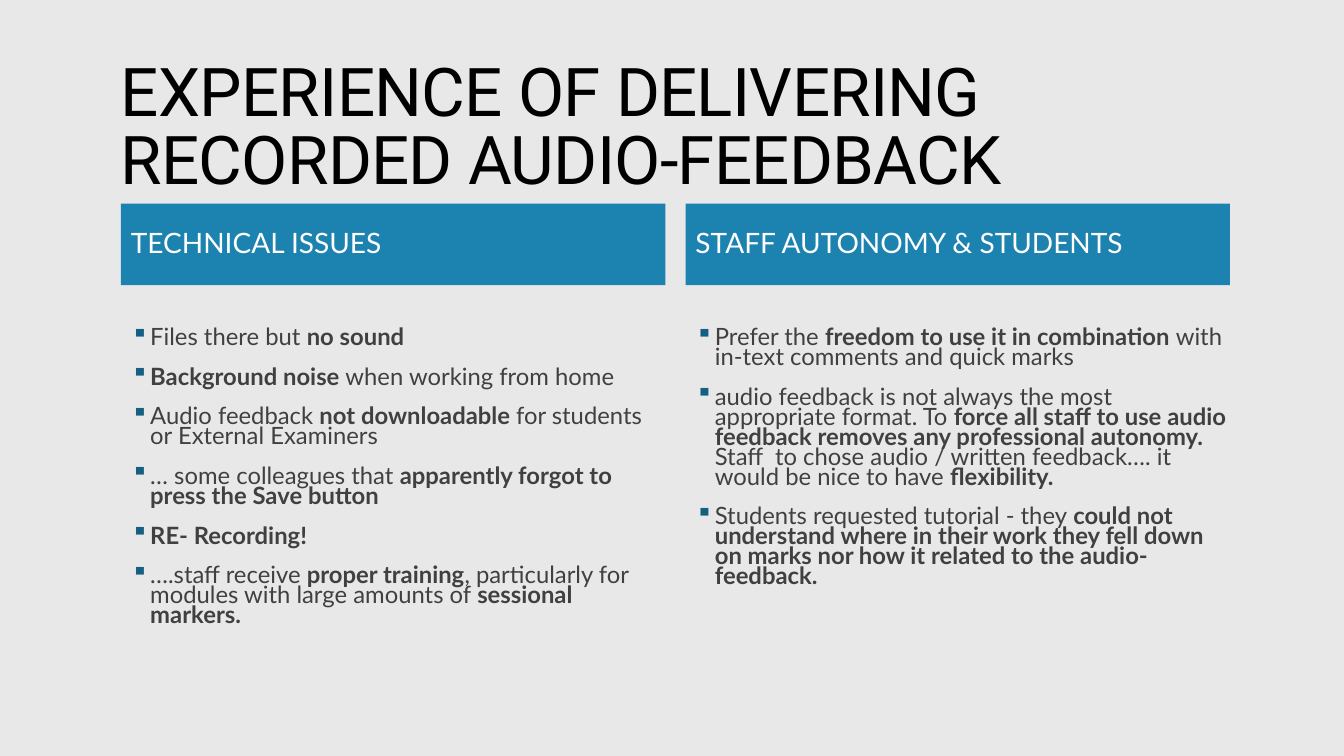
from dataclasses import dataclass

from lxml import etree
from pptx import Presentation
from pptx.dml.color import RGBColor
from pptx.enum.shapes import MSO_SHAPE
from pptx.enum.text import MSO_ANCHOR, PP_ALIGN
from pptx.oxml.ns import qn
from pptx.util import Inches, Pt

RECTANGLE = MSO_SHAPE.RECTANGLE
LEFT = PP_ALIGN.LEFT
TOP, MIDDLE, BOTTOM = MSO_ANCHOR.TOP, MSO_ANCHOR.MIDDLE, MSO_ANCHOR.BOTTOM

COLOURS = {
    "background": "E8E8E8",
    "title": "000000",
    "band": "1C82B0",
    "heading": "FFFFFF",
    "body": "404040",
    "bullet": "156082",
}

# Grid in inches: two columns, with a title row, a heading row and a body row
SLIDE_WIDTH, SLIDE_HEIGHT = 13.33, 7.5
MARGIN, COLUMN_WIDTH, GUTTER = 1.2, 5.4, 0.2
TITLE_TOP, HEADING_TOP, BODY_TOP, BODY_BOTTOM = 0.43, 2.02, 2.82, 6.51
HEADING_HEIGHT = 0.81
TEXT_INSET = 0.1
BODY_TOP_INSET = 0.45
BULLET_INDENT, BULLET_HANG = 0.29, 0.19

TITLE_FONT = {"name": "Roboto", "size": Pt(48)}
HEADING_FONT = {"name": "Lato", "size": Pt(20)}
BODY_FONT = {"name": "Lato", "size": Pt(17)}

TITLE_FORMAT = {"alignment": LEFT, "line_spacing": 0.85}
HEADING_FORMAT = {"alignment": LEFT, "line_spacing": 0.9, "space_after": Pt(2)}
BODY_FORMAT = {"alignment": LEFT, "line_spacing": 0.7, "space_after": Pt(2)}
NEXT_BULLET_FORMAT = {"space_before": Pt(12)}

TITLE_FRAME = {"word_wrap": True, "vertical_anchor": BOTTOM}
HEADING_FRAME = {"word_wrap": True, "vertical_anchor": MIDDLE}
BODY_FRAME = {
    "word_wrap": True,
    "vertical_anchor": TOP,
    "margin_left": 0,
    "margin_right": 0,
    "margin_top": Inches(BODY_TOP_INSET),
}


@dataclass(frozen=True)
class Topic:
    heading: str
    bullets: tuple[str, ...]  # ** switches bold on and off


TITLE = "EXPERIENCE OF DELIVERING RECORDED AUDIO-FEEDBACK"
TOPICS = (
    Topic("TECHNICAL ISSUES", (
        "Files there but **no sound**",
        "**Background noise **when working from home",
        "Audio feedback **not downloadable **for students or External Examiners",
        "… some colleagues that **apparently forgot to press the Save button**",
        "**RE- Recording!**",
        "….staff receive **proper training**, particularly for modules with "
        "large amounts of **sessional markers.**",
    )),
    Topic("STAFF AUTONOMY & STUDENTS", (
        "Prefer the **freedom to use it in combination **with in-text comments "
        "and quick marks",
        "audio feedback is not always the most appropriate format. To **force "
        "all staff to use audio feedback removes any professional autonomy. **"
        "Staff  to chose audio / written feedback…. it would be nice to have "
        "**flexibility.**",
        "Students requested tutorial - they** could not understand where in "
        "their work they fell down on marks nor how it related to the "
        "audio-feedback.**",
    )),
)


def colour(name: str) -> RGBColor:
    return RGBColor.from_string(COLOURS[name])


def apply_format(target, values: dict) -> None:
    for attribute, value in values.items():
        setattr(target, attribute, value)


def add_marked_text(paragraph, text: str, font: dict, colour_name: str) -> None:
    """Add runs, with every second part between ** marks in bold."""
    for index, part in enumerate(text.split("**")):
        if part:
            run = paragraph.add_run()
            run.text = part
            apply_format(run.font, {**font, "bold": index % 2 == 1})
            run.font.color.rgb = colour(colour_name)


def add_bullet(paragraph) -> None:
    properties = paragraph._p.get_or_add_pPr()
    properties.set("marL", str(Inches(BULLET_INDENT)))
    properties.set("indent", str(-Inches(BULLET_HANG)))
    bullet_colour = etree.SubElement(properties, qn("a:buClr"))
    etree.SubElement(bullet_colour, qn("a:srgbClr"), val=COLOURS["bullet"])
    etree.SubElement(properties, qn("a:buChar"), char="▪")


def add_title(slide) -> None:
    width = 2 * COLUMN_WIDTH + GUTTER
    shape = slide.shapes.add_textbox(
        Inches(MARGIN - TEXT_INSET), Inches(TITLE_TOP),
        Inches(width), Inches(HEADING_TOP - TITLE_TOP))
    apply_format(shape.text_frame, TITLE_FRAME)
    paragraph = shape.text_frame.paragraphs[0]
    apply_format(paragraph, TITLE_FORMAT)
    add_marked_text(paragraph, TITLE, TITLE_FONT, "title")
    paragraph.runs[0].font._element.set("spc", "-50")


def add_heading(slide, left: float, heading: str) -> None:
    shape = slide.shapes.add_shape(
        RECTANGLE, Inches(left), Inches(HEADING_TOP),
        Inches(COLUMN_WIDTH), Inches(HEADING_HEIGHT))
    shape.shadow.inherit = False
    shape.fill.solid()
    shape.fill.fore_color.rgb = colour("band")
    shape.line.fill.background()
    apply_format(shape.text_frame, HEADING_FRAME)
    paragraph = shape.text_frame.paragraphs[0]
    apply_format(paragraph, HEADING_FORMAT)
    add_marked_text(paragraph, heading, HEADING_FONT, "heading")


def add_bullets(slide, left: float, bullets: tuple[str, ...]) -> None:
    shape = slide.shapes.add_textbox(
        Inches(left), Inches(BODY_TOP),
        Inches(COLUMN_WIDTH), Inches(BODY_BOTTOM - BODY_TOP))
    frame = shape.text_frame
    apply_format(frame, BODY_FRAME)
    for index, bullet in enumerate(bullets):
        paragraph = frame.add_paragraph() if index else frame.paragraphs[0]
        add_bullet(paragraph)
        apply_format(paragraph, BODY_FORMAT)
        if index:
            apply_format(paragraph, NEXT_BULLET_FORMAT)
        add_marked_text(paragraph, bullet, BODY_FONT, "body")


def main() -> None:
    presentation = Presentation()
    presentation.slide_width = Inches(SLIDE_WIDTH)
    presentation.slide_height = Inches(SLIDE_HEIGHT)
    slide = presentation.slides.add_slide(presentation.slide_layouts[6])
    slide.background.fill.solid()
    slide.background.fill.fore_color.rgb = colour("background")

    add_title(slide)
    for column, topic in enumerate(TOPICS):
        left = MARGIN + column * (COLUMN_WIDTH + GUTTER)
        add_heading(slide, left, topic.heading)
        add_bullets(slide, left, topic.bullets)

    presentation.save("out.pptx")


if __name__ == "__main__":
    main()
